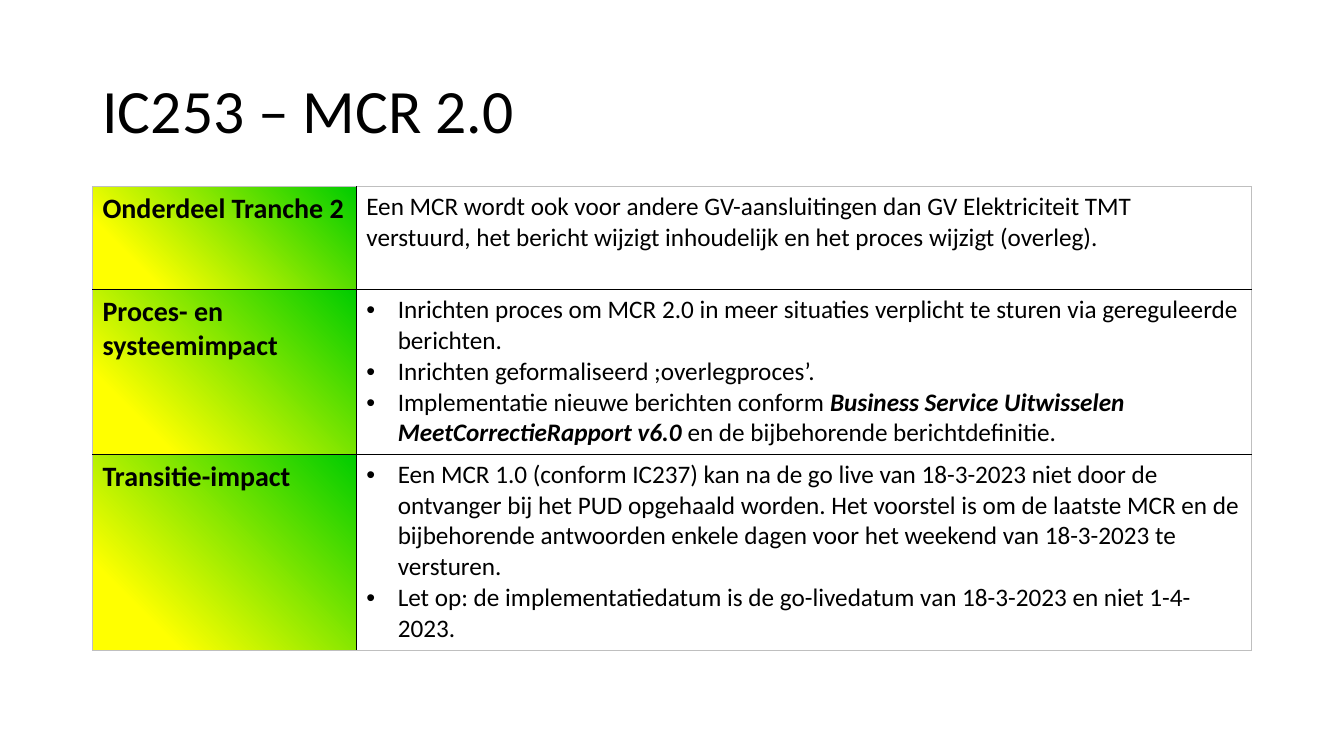
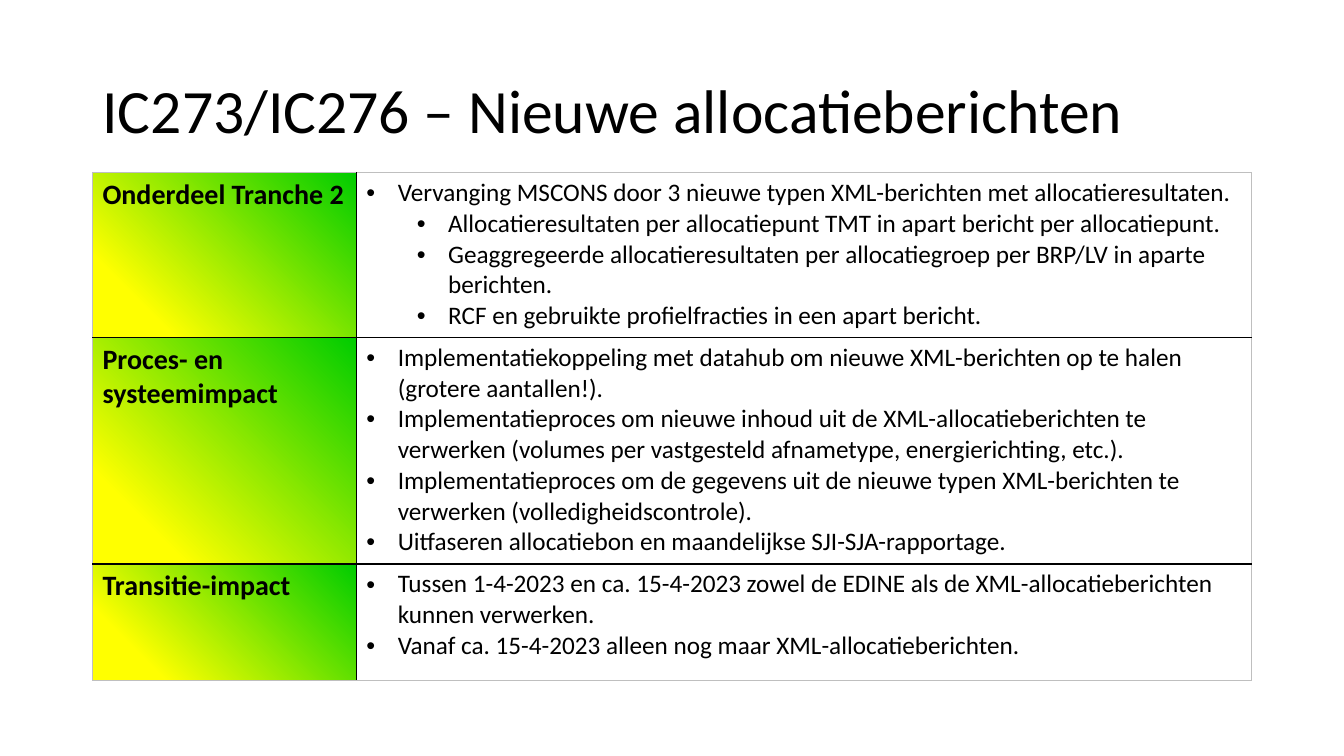
from dataclasses import dataclass

from lxml import etree
from pptx import Presentation
from pptx.dml.color import RGBColor
from pptx.enum import text
from pptx.oxml import ns
from pptx.util import Cm, Pt

PLAIN, BULLET, SUB = 0, 1, 2
ROW_LABELS = ("Onderdeel Tranche 2", "Proces- en systeemimpact", "Transitie-impact")

TOPICS = [
    {
        "title": "IC253 – MCR 2.0",
        "top": 4.71,
        "heights": (2.59, 4.15, 4.95),
        "details": [
            [(PLAIN, ["Een MCR wordt ook voor andere GV-aansluitingen dan GV Elektriciteit TMT verstuurd, het bericht wijzigt inhoudelijk en het proces wijzigt (overleg)."])],
            [
                (BULLET, ["Inrichten proces om MCR 2.0 in meer situaties verplicht te sturen via gereguleerde berichten."]),
                (BULLET, ["Inrichten geformaliseerd ;overlegproces’."]),
                (BULLET, [
                    "Implementatie nieuwe berichten conform ",
                    "Business Service Uitwisselen MeetCorrectieRapport v6.0",
                    " en de bijbehorende berichtdefinitie.",
                ]),
            ],
            [
                (BULLET, ["Een MCR 1.0 (conform IC237) kan na de go live van 18-3-2023 niet door de ontvanger bij het PUD opgehaald worden. Het voorstel is om de laatste MCR en de bijbehorende antwoorden enkele dagen voor het weekend van 18-3-2023 te versturen."]),
                (BULLET, ["Let op: de implementatiedatum is de go-livedatum van 18-3-2023 en niet 1-4-2023."]),
            ],
        ],
    },
    {
        "title": "IC273/IC276 – Nieuwe allocatieberichten",
        "top": 4.35,
        "heights": (4.15, 5.71, 2.93),
        "details": [
            [
                (BULLET, ["Vervanging MSCONS door 3 nieuwe typen XML-berichten met allocatieresultaten."]),
                (SUB, ["Allocatieresultaten per allocatiepunt TMT in apart bericht per allocatiepunt."]),
                (SUB, ["Geaggregeerde allocatieresultaten per allocatiegroep per BRP/LV in aparte berichten."]),
                (SUB, ["RCF en gebruikte profielfracties in een apart bericht."]),
            ],
            [
                (BULLET, ["Implementatiekoppeling met datahub om nieuwe XML-berichten op te halen (grotere aantallen!)."]),
                (BULLET, ["Implementatieproces om nieuwe inhoud uit de XML-allocatieberichten te verwerken (volumes per vastgesteld afnametype, energierichting, etc.)."]),
                (BULLET, ["Implementatieproces om de gegevens uit de nieuwe typen XML-berichten te verwerken (volledigheidscontrole)."]),
                (BULLET, ["Uitfaseren allocatiebon en maandelijkse SJI-SJA-rapportage."]),
            ],
            [
                (BULLET, ["Tussen 1-4-2023 en ca. 15-4-2023 zowel de EDINE als de XML-allocatieberichten kunnen verwerken."]),
                (BULLET, ["Vanaf ca. 15-4-2023 alleen nog maar XML-allocatieberichten."]),
            ],
        ],
    },
]


@dataclass(frozen=True)
class Theme:
    font: str = "Calibri"
    ink: str = "000000"
    frame: str = "BFBFBF"
    gradient: tuple = ((0, "00CC00"), (0.81, "FFFF00"))
    gradient_angle: int = 225
    title_size: int = 44
    label_size: int = 20
    detail_size: int = 18
    inner_line: float = 1
    outer_line: float = 0.75


THEME = Theme()
LEFT, WIDTH, LABEL_WIDTH = Cm(2.33), Cm(29.21), Cm(6.65)
TITLE_BOX = {"left": LEFT, "top": Cm(1.01), "width": WIDTH, "height": Cm(3.68)}
HANG, LEVEL_STEP = Cm(0.79), Cm(1.27)


def apply(target, values):
    for name, value in values.items():
        setattr(target, name, value)


def style_font(font, size, **extra):
    apply(font, {"name": THEME.font, "size": Pt(size), **extra})
    font.color.rgb = RGBColor.from_string(THEME.ink)


def add_title(slide, wording):
    title = slide.shapes.title
    apply(title, TITLE_BOX)
    apply(title.text_frame, {"text": wording, "word_wrap": True,
                             "vertical_anchor": text.MSO_ANCHOR.MIDDLE})
    heading = title.text_frame.paragraphs[0]
    apply(heading, {"alignment": text.PP_ALIGN.LEFT, "line_spacing": 0.9})
    style_font(heading.runs[0].font, THEME.title_size)


def add_borders(cell, outer_sides):
    properties = cell._tc.get_or_add_tcPr()
    for side in "LRTB":
        outer = side in outer_sides
        width = THEME.outer_line if outer else THEME.inner_line
        line = etree.SubElement(properties, ns.qn(f"a:ln{side}"), w=str(Pt(width)))
        fill = etree.SubElement(line, ns.qn("a:solidFill"))
        etree.SubElement(fill, ns.qn("a:srgbClr"), val=THEME.frame if outer else THEME.ink)


def add_bullet(paragraph, depth):
    paragraph.level = depth - 1
    properties = paragraph._p.get_or_add_pPr()
    properties.set("marL", str(HANG + LEVEL_STEP * (depth - 1)))
    properties.set("indent", str(-HANG))
    etree.SubElement(properties, ns.qn("a:buFont"), typeface="Arial")
    etree.SubElement(properties, ns.qn("a:buChar"), char="•")


def fill_label(cell, wording):
    cell.fill.gradient()
    cell.fill.gradient_angle = THEME.gradient_angle
    for stop, (position, color) in zip(cell.fill.gradient_stops, THEME.gradient):
        stop.position = position
        stop.color.rgb = RGBColor.from_string(color)
    cell.text = wording
    style_font(cell.text_frame.paragraphs[0].runs[0].font, THEME.label_size, bold=True)


def fill_detail(cell, items):
    cell.fill.background()
    frame = cell.text_frame
    for index, (depth, parts) in enumerate(items):
        paragraph = frame.add_paragraph() if index else frame.paragraphs[0]
        if depth:
            add_bullet(paragraph, depth)
        for part_index, part in enumerate(parts):
            run = paragraph.add_run()
            run.text = part
            emphasis = part_index % 2 == 1
            style_font(run.font, THEME.detail_size, bold=emphasis, italic=emphasis)


def add_impact_table(slide, topic):
    heights = [Cm(height) for height in topic["heights"]]
    table = slide.shapes.add_table(len(heights), 2, LEFT, Cm(topic["top"]),
                                   WIDTH, sum(heights)).table
    apply(table, {"first_row": False, "horz_banding": False})
    for column, width in zip(table.columns, (LABEL_WIDTH, WIDTH - LABEL_WIDTH)):
        column.width = width
    last = len(heights) - 1
    for index, (height, label, items) in enumerate(zip(heights, ROW_LABELS, topic["details"])):
        table.rows[index].height = height
        label_cell, detail_cell = table.rows[index].cells
        edges = ("T" if index == 0 else "") + ("B" if index == last else "")
        add_borders(label_cell, edges + "L")
        add_borders(detail_cell, edges + "R")
        fill_label(label_cell, label)
        fill_detail(detail_cell, items)


def main():
    deck = Presentation()
    apply(deck, {"slide_width": Cm(33.87), "slide_height": Cm(19.05)})
    for topic in TOPICS:
        slide = deck.slides.add_slide(deck.slide_layouts[5])
        add_title(slide, topic["title"])
        add_impact_table(slide, topic)
    deck.save("out.pptx")


if __name__ == "__main__":
    main()
